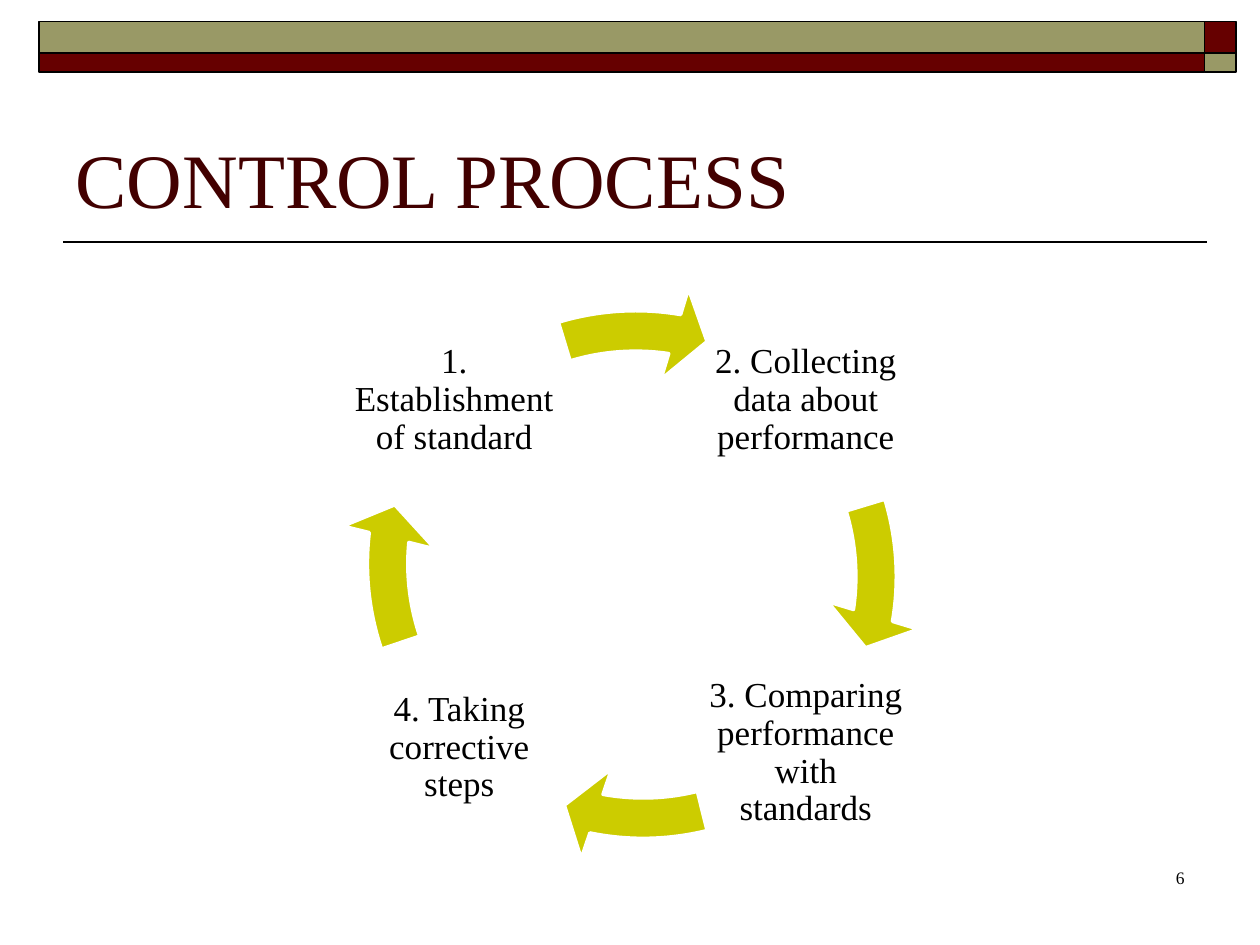
from lxml.etree import SubElement
from pptx import Presentation
from pptx.dml.color import RGBColor
from pptx.enum.shapes import MSO_CONNECTOR, MSO_SHAPE
from pptx.enum.text import MSO_ANCHOR, PP_ALIGN
from pptx.oxml.ns import qn
from pptx.util import Emu, Pt

PX = 9144  # 100 px to the inch
FONT = "Times New Roman"
COLORS = {
    "maroon": "660000",
    "olive": "999966",
    "title": "420000",
    "arrow": "CCCC00",
    "black": "000000",
    "white": "FFFFFF",
}


def add_block(kind, box, fill, line, line_width):
    block = slide.shapes.add_shape(kind, *[Emu(value * PX) for value in box])
    block.shadow.inherit = False
    block.fill.solid()
    block.fill.fore_color.rgb = RGBColor.from_string(COLORS[fill])
    block.line.color.rgb = RGBColor.from_string(COLORS[line])
    block.line.width = Pt(line_width)
    return block


def write_text(shape, text, size, color, alignment, anchor):
    frame = shape.text_frame
    frame.word_wrap = True
    frame.vertical_anchor = anchor
    paragraph = frame.paragraphs[0]
    paragraph.alignment = alignment
    run = paragraph.add_run()
    run.text = text
    run.font.name = FONT
    run.font.size = Pt(size)
    run.font.color.rgb = RGBColor.from_string(COLORS[color])
    return paragraph


presentation = Presentation()
presentation.slide_width = Emu(1000 * PX)
presentation.slide_height = Emu(750 * PX)
slide = presentation.slides.add_slide(presentation.slide_layouts[5])

# Rule under the title
rule = slide.shapes.add_connector(
    MSO_CONNECTOR.STRAIGHT, Emu(50 * PX), Emu(192 * PX), Emu(958 * PX), Emu(192 * PX)
)
rule.line.color.rgb = RGBColor.from_string(COLORS["black"])
rule.line.width = Pt(1)
SubElement(rule._element.spPr, qn("a:effectLst"))

# Two-row header band with swapped colours at the right end
for top, height, long_fill, end_fill in [
    (17, 25, "olive", "maroon"),
    (42, 15, "maroon", "olive"),
]:
    for left, width, fill in [(31, 925, long_fill), (956, 25, end_fill)]:
        add_block(MSO_SHAPE.RECTANGLE, (left, top, width, height), fill, "black", 1)

# Title
title = slide.shapes.title
title.left, title.top = Emu(50 * PX), Emu(58 * PX)
title.width, title.height = Emu(900 * PX), Emu(125 * PX)
write_text(title, "CONTROL PROCESS", 44, "title", PP_ALIGN.LEFT, MSO_ANCHOR.BOTTOM)

# Cycle: each step's text position, then its arrow's position, end and start angle
STEP_SIZE, ARROW_SIZE = 165, 465
cycle = [
    ("2. Collecting data about performance", (557, 235), (268, 225), 5.484, 205.86),
    ("3. Comparing performance with standards", (557, 515), (278, 222), 60.583, 45.65),
    ("4. Taking corrective steps", (282, 511), (270, 215), 111.692, 96.775),
    ("1. Establishment of standard", (278, 235), (272, 225), 167.484, 151.86),
]
for text, text_position, arrow_position, end_angle, start_angle in cycle:
    step = slide.shapes.add_textbox(
        *[Emu(value * PX) for value in (*text_position, STEP_SIZE, STEP_SIZE)]
    )
    frame = step.text_frame
    frame.margin_left = frame.margin_right = Emu(3 * PX)
    frame.margin_top = frame.margin_bottom = Emu(3 * PX)
    paragraph = write_text(step, text, 20, "black", PP_ALIGN.CENTER, MSO_ANCHOR.MIDDLE)
    paragraph.line_spacing = 0.9
    paragraph.space_after = Pt(7)

    arrow = add_block(
        MSO_SHAPE.CIRCULAR_ARROW,
        (*arrow_position, ARROW_SIZE, ARROW_SIZE),
        "arrow", "white", 2,
    )
    # Band thickness, head angle, end, start, head width
    for index, value in enumerate([0.069, 4.656, end_angle, start_angle, 0.081]):
        arrow.adjustments[index] = value

# Slide number
number = slide.shapes.add_textbox(
    Emu(742 * PX), Emu(683 * PX), Emu(208 * PX), Emu(50 * PX)
)
write_text(number, "6", 10, "black", PP_ALIGN.RIGHT, MSO_ANCHOR.TOP)

presentation.save("out.pptx")
